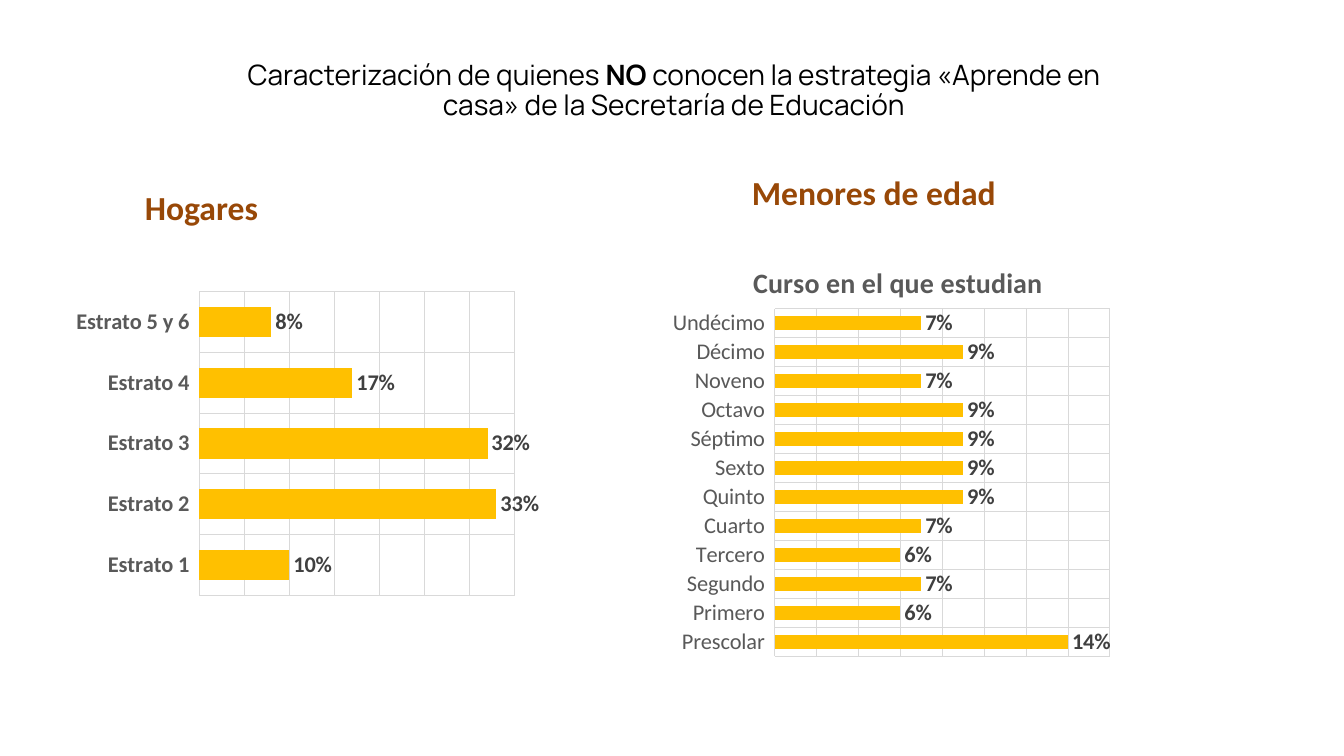
from lxml.etree import SubElement
from pptx import Presentation
from pptx.chart.data import CategoryChartData
from pptx.dml.color import RGBColor
from pptx.enum.chart import XL_CHART_TYPE, XL_LABEL_POSITION, XL_TICK_LABEL_POSITION, XL_TICK_MARK
from pptx.enum.text import MSO_ANCHOR, MSO_AUTO_SIZE, PP_ALIGN
from pptx.oxml.ns import qn
from pptx.util import Emu, Pt

PX = 914400 / 100.8
BLACK = RGBColor(0x00, 0x00, 0x00)
BROWN = RGBColor(0x98, 0x48, 0x07)
AMBER = RGBColor(0xFF, 0xC0, 0x00)
GRAY = RGBColor(0x59, 0x59, 0x59)
DARK = RGBColor(0x40, 0x40, 0x40)
GRID = RGBColor(0xD9, 0xD9, 0xD9)


def px(*lengths):
    return [Emu(round(n * PX)) for n in lengths]


def set_layout(parent, index, **values):
    """Place a chart part by fractions of the chart's size."""
    for old in parent.findall(qn("c:layout")):
        parent.remove(old)
    layout = SubElement(parent, qn("c:layout"))
    parent.insert(index, layout)
    manual = SubElement(layout, qn("c:manualLayout"))
    for tag, value in values.items():
        SubElement(manual, qn(f"c:{tag}")).set("val", str(value))


prs = Presentation()
prs.slide_width, prs.slide_height = px(1344, 756)
s = prs.slides.add_slide(prs.slide_layouts[5])

title = s.shapes.title
title.left, title.top, title.width, title.height = px(209, 56, 930, 72)
tf = title.text_frame
tf.word_wrap = True
tf.auto_size = MSO_AUTO_SIZE.NONE
tf.vertical_anchor = MSO_ANCHOR.TOP
p = tf.paragraphs[0]
p.alignment = PP_ALIGN.CENTER
p.line_spacing = 0.9
p.font.size, p.font.name = Pt(20), "Manrope"
p.font.color.rgb = BLACK
for text, bold in [
    ("Caracterización de quienes ", False),
    ("NO", True),
    (" conocen la estrategia «Aprende en casa» de la Secretaría de Educación", False),
]:
    r = p.add_run()
    r.text, r.font.bold = text, bold

for text, box in [("Hogares", (135, 182, 135, 50)),
                  ("Menores de edad", (742, 167, 267, 50))]:
    tf = s.shapes.add_textbox(*px(*box)).text_frame
    tf.word_wrap = False
    tf.auto_size = MSO_AUTO_SIZE.SHAPE_TO_FIT_TEXT
    p = tf.paragraphs[0]
    p.text = text
    p.font.size, p.font.name, p.font.bold = Pt(24), "Calibri", True
    p.font.color.rgb = BROWN

strata = [("Estrato 1", 0.10), ("Estrato 2", 0.33), ("Estrato 3", 0.32),
          ("Estrato 4", 0.17), ("Estrato 5 y 6", 0.08)]
grades = [("Prescolar", 0.14), ("Primero", 0.06), ("Segundo", 0.07), ("Tercero", 0.06),
          ("Cuarto", 0.07), ("Quinto", 0.09), ("Sexto", 0.09), ("Séptimo", 0.09),
          ("Octavo", 0.09), ("Noveno", 0.07), ("Décimo", 0.09), ("Undécimo", 0.07)]

# box, rows, heading, bold categories, axis maximum, axis step, plot area
charts = [
    ((54, 275, 485, 337), strata, None, True, 0.35, 0.05, (0.3, 0.05, 0.65, 0.9)),
    ((672, 241, 447, 424), grades, "Curso en el que estudian", False, 0.16, 0.02,
     (0.23, 0.16, 0.75, 0.82)),
]
for box, rows, heading, bold, top, step, (x, y, w, h) in charts:
    data = CategoryChartData(number_format="0%")
    data.categories = [name for name, share in rows]
    data.add_series("Series 1", [share for name, share in rows])
    chart = s.shapes.add_chart(XL_CHART_TYPE.BAR_CLUSTERED, *px(*box), data).chart
    chart.font.size, chart.font.name = Pt(10), "Calibri"
    chart.font.color.rgb = BLACK
    chart.has_legend = False
    chart.has_title = heading is not None
    if heading:
        tf = chart.chart_title.text_frame
        tf.text = heading
        font = tf.paragraphs[0].font
        font.size, font.name, font.bold = Pt(20), "Calibri", True
        font.color.rgb = GRAY
        set_layout(chart.chart_title._element, 1, xMode="edge", yMode="edge", x=0.17, y=0.04)

    plot = chart.plots[0]
    plot.gap_width = 100
    plot.vary_by_categories = False
    fill = plot.series[0].format.fill
    fill.solid()
    fill.fore_color.rgb = AMBER
    plot.has_data_labels = True
    labels = plot.data_labels
    labels.show_value = True
    labels.number_format, labels.number_format_is_linked = "0%", False
    labels.position = XL_LABEL_POSITION.OUTSIDE_END
    labels.font.size, labels.font.name, labels.font.bold = Pt(16), "Calibri", True
    labels.font.color.rgb = DARK

    cat, val = chart.category_axis, chart.value_axis
    cat.major_tick_mark = cat.minor_tick_mark = XL_TICK_MARK.NONE
    cat.tick_label_position = XL_TICK_LABEL_POSITION.LOW
    font = cat.tick_labels.font
    font.size, font.name, font.bold = Pt(16), "Calibri", bold
    font.color.rgb = GRAY
    val.visible = False
    val.minimum_scale, val.maximum_scale, val.major_unit = 0, top, step
    cat.has_major_gridlines = val.has_major_gridlines = True
    for part in (cat, cat.major_gridlines, val.major_gridlines):
        part.format.line.color.rgb = GRID
        part.format.line.width = Pt(0.75)
    set_layout(plot._element.getparent(), 0, layoutTarget="inner", xMode="edge", yMode="edge",
               x=x, y=y, w=w, h=h)

prs.save("out.pptx")
